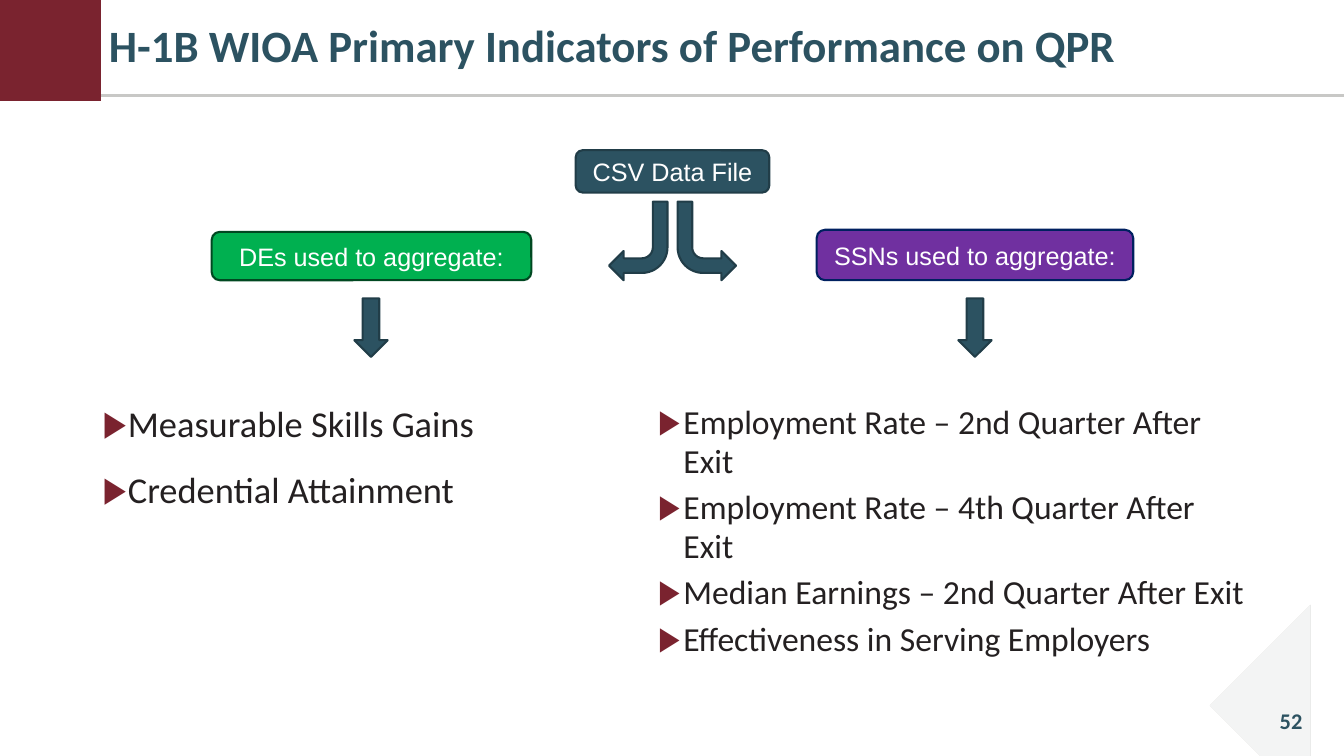
from dataclasses import dataclass

from lxml.etree import SubElement
from pptx import Presentation
from pptx.dml.color import RGBColor
from pptx.enum.shapes import MSO_SHAPE as Preset
from pptx.enum.text import MSO_ANCHOR as Anchor, PP_ALIGN as Align
from pptx.oxml.ns import qn
from pptx.util import Inches, Pt


@dataclass(frozen=True)
class Theme:
    heading_font: str = "Calibri"
    label_font: str = "Arial"
    teal: str = "2C5261"
    teal_edge: str = "213D48"
    maroon: str = "7A232F"
    ink: str = "242021"
    white: str = "FFFFFF"
    grey: str = "C8C8C6"
    grey_dark: str = "ABABA8"
    pale: str = "F3F4F4"
    green: str = "00B050"
    green_edge: str = "004821"
    purple: str = "7030A0"
    navy: str = "002060"
    title_size: int = 32
    left_list_size: int = 26
    right_list_size: int = 24
    label_size: int = 18
    number_size: int = 16
    edge_width: float = 1.5


THEME = Theme()


def color(code):
    return RGBColor.from_string(code)


def paint(shape, fill, edge=None):
    shape.shadow.inherit = False
    shape.fill.solid()
    shape.fill.fore_color.rgb = color(fill)
    if edge:
        shape.line.color.rgb = color(edge)
        shape.line.width = Pt(THEME.edge_width)
    else:
        shape.line.fill.background()


def add_preset(slide, preset, box, fill, edge=None):
    shape = slide.shapes.add_shape(preset, *map(Inches, box))
    paint(shape, fill, edge)
    return shape


def add_run(paragraph, text, size, code, font=THEME.heading_font, bold=False):
    run = paragraph.add_run()
    run.text = text
    run.font.size = Pt(size)
    run.font.name = font
    run.font.bold = bold
    run.font.color.rgb = color(code)


def add_text_frame(slide, box, anchor=Anchor.TOP):
    frame = slide.shapes.add_textbox(*map(Inches, box)).text_frame
    frame.word_wrap = True
    frame.vertical_anchor = anchor
    return frame


def add_label(slide, box, text, fill, edge):
    shape = add_preset(slide, Preset.ROUNDED_RECTANGLE, box, fill, edge)
    frame = shape.text_frame
    frame.vertical_anchor = Anchor.MIDDLE
    frame.paragraphs[0].alignment = Align.CENTER
    add_run(frame.paragraphs[0], text, THEME.label_size, THEME.white, THEME.label_font)


def add_bullet(paragraph):
    properties = paragraph._p.get_or_add_pPr()
    properties.set("marL", str(Inches(0.25)))
    properties.set("indent", str(Inches(-0.25)))
    bullet_color = SubElement(properties, qn("a:buClr"))
    SubElement(bullet_color, qn("a:srgbClr"), val=THEME.maroon)
    SubElement(properties, qn("a:buFont"), typeface=THEME.label_font)
    SubElement(properties, qn("a:buChar"), char="▶")


def add_bullet_list(slide, box, items, size, gap):
    frame = add_text_frame(slide, box)
    for index, item in enumerate(items):
        paragraph = frame.add_paragraph() if index else frame.paragraphs[0]
        add_bullet(paragraph)
        paragraph.line_spacing = 0.95
        paragraph.space_before = Pt(gap if index else 0)
        add_run(paragraph, item, size, THEME.ink)


def add_outline(slide, points, fill):
    builder = slide.shapes.build_freeform(*points[0], scale=Inches(1))
    builder.add_line_segments(points[1:])
    paint(builder.convert_to_shape(), fill)


def curve(start, first, second, end, steps=16):
    """Points along a cubic Bézier curve."""
    weights = [((1 - t) ** 3, 3 * t * (1 - t) ** 2, 3 * t * t * (1 - t), t ** 3)
               for t in (step / steps for step in range(steps + 1))]
    controls = (start, first, second, end)
    return [tuple(sum(w * c[axis] for w, c in zip(row, controls)) for axis in (0, 1))
            for row in weights]


def add_header_rule(slide):
    rule = add_preset(slide, Preset.RECTANGLE, (0, 0.93, 13.33, 0.03), THEME.grey)
    rule.fill.gradient()
    rule.fill.gradient_angle = 0
    stops = rule.fill.gradient_stops
    for stop, position, code in zip(stops, (0, 0.08), (THEME.grey_dark, THEME.grey)):
        stop.position = position
        stop.color.rgb = color(code)


def add_corners(slide):
    add_outline(slide, [(0, 0), (0.35, 0), (0.86, 0.5), (0, 1.36)], THEME.grey)
    add_outline(slide, [(0, 0), (0.3, 0), (0.8, 0.5), (0, 1.31)], THEME.pale)
    rounded_tip = curve((0.48, 0.34), (0.57, 0.43), (0.57, 0.58), (0.48, 0.67))
    add_outline(slide, [(0, 0), (0.14, 0), *rounded_tip, (0, 1.15)], THEME.maroon)
    for inset, fill in ((0, THEME.grey), (0.04, THEME.pale)):
        add_outline(slide, [(13.33, 6.18 + inset), (13.33, 7.5),
                            (12.68 + inset, 7.5), (12.35 + inset, 7.17)], fill)


def add_title(slide, text):
    frame = add_text_frame(slide, (0.88, 0.05, 12.12, 0.86), Anchor.MIDDLE)
    frame.margin_left = Inches(0.2)
    frame.paragraphs[0].line_spacing = 0.9
    add_run(frame.paragraphs[0], text, THEME.title_size, THEME.teal, bold=True)


def add_slide_number(slide, number):
    frame = add_text_frame(slide, (12.45, 6.95, 0.71, 0.4), Anchor.MIDDLE)
    frame.paragraphs[0].alignment = Align.CENTER
    add_run(frame.paragraphs[0], number, THEME.number_size, THEME.teal, bold=True)


def add_arrows(slide):
    for center in (9.67, 3.68):
        add_preset(slide, Preset.DOWN_ARROW, (center - 0.165, 2.96, 0.33, 0.58),
                   THEME.teal, THEME.teal_edge)
    for left, mirrored in ((6.72, True), (6.04, False)):
        arrow = add_preset(slide, Preset.BENT_ARROW, (left, 2, 0.58, 0.78),
                           THEME.teal, THEME.teal_edge)
        arrow.rotation = 180
        if mirrored:
            arrow._element.spPr.xfrm.set("flipH", "1")


def main():
    presentation = Presentation()
    presentation.slide_width = Inches(13.33)
    presentation.slide_height = Inches(7.5)
    slide = presentation.slides.add_slide(presentation.slide_layouts[6])

    add_header_rule(slide)
    add_corners(slide)
    add_slide_number(slide, "52")
    add_title(slide, "H-1B WIOA Primary Indicators of Performance on QPR")

    add_bullet_list(slide, (0.92, 3.96, 5.67, 2.8),
                    ["Measurable Skills Gains", "Credential Attainment"],
                    THEME.left_list_size, gap=18)
    add_bullet_list(slide, (6.43, 3.96, 6.04, 2.8),
                    ["Employment Rate – 2nd Quarter After Exit",
                     "Employment Rate – 4th Quarter After Exit",
                     "Median Earnings – 2nd Quarter After Exit",
                     "Effectiveness in Serving Employers"],
                    THEME.right_list_size, gap=6)

    add_label(slide, (5.71, 1.49, 1.92, 0.42), "CSV Data File", THEME.teal, THEME.teal_edge)
    add_label(slide, (8.1, 2.28, 3.14, 0.5), "SSNs used to aggregate:", THEME.purple, THEME.navy)
    add_label(slide, (2.1, 2.3, 3.17, 0.48), "DEs used to aggregate:", THEME.green, THEME.green_edge)
    add_arrows(slide)

    presentation.save("out.pptx")


if __name__ == "__main__":
    main()
